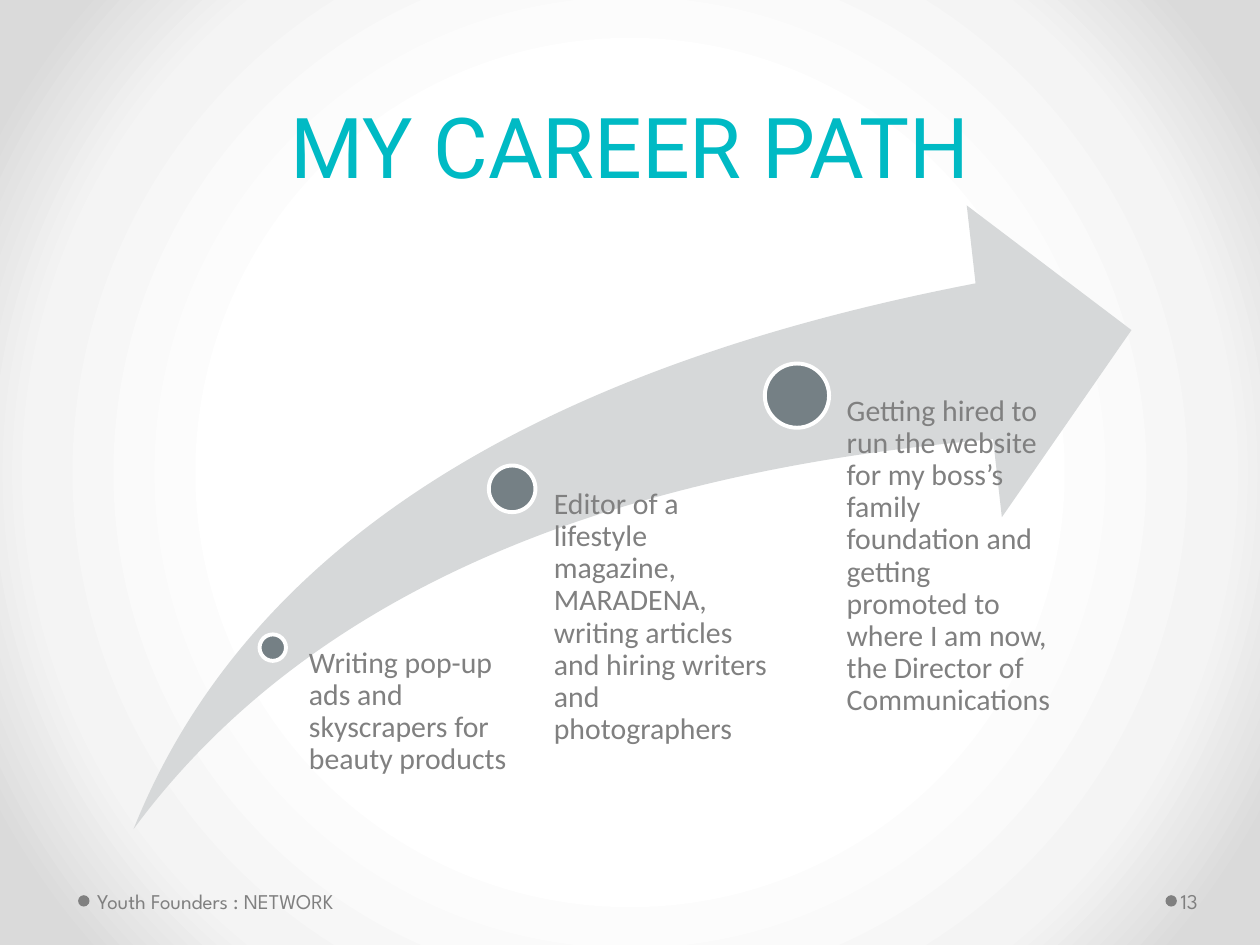
from lxml.etree import SubElement
from pptx import Presentation
from pptx.dml.color import RGBColor
from pptx.enum.shapes import MSO_SHAPE as Preset
from pptx.enum.text import MSO_ANCHOR as Anchor, PP_ALIGN as Align
from pptx.oxml.ns import qn
from pptx.util import Inches, Pt

COLUMNS, ROWS = 100, 75
CELL = Inches(0.1)
COLORS = {
    "title": "00BAC4", "text": "808080", "arrow": "D6D8D9",
    "marker": "758085", "outline": "FFFFFF",
}
BACKGROUND_STOPS = [(50, "FFFFFF"), (76, "F4F4F4"), (92, "DADADA")]
CAPTION_BOTTOM = 65.8
MILESTONES = [
    (21.65, 51.4, 2.1, 23.4, 18.5,
     "Writing pop-up\nads and skyscrapers for beauty products"),
    (40.65, 38.8, 3.7, 42, 19,
     "Editor of a lifestyle magazine, MARADENA, writing articles "
     "and hiring writers and photographers"),
    (63.25, 31.4, 5.1, 64.5, 19,
     "Getting hired to run the website for my boss’s family foundation and "
     "getting promoted to where I am now, the Director of Communications"),
]
FOOTERS = [
    (6.2, 7.2, 31.1, 0.5, "Youth Founders : NETWORK"),
    (92.5, 93.4, 6.1, 0.3, "13"),
]
FOOTER_TOP, FOOTER_HEIGHT, BULLET_SIZE = 69.5, 4, 0.9


def grid(*cells):
    return [round(cell * CELL) for cell in cells]


def rgb(name):
    return RGBColor.from_string(COLORS[name])


def apply(target, values):
    for name, value in values.items():
        setattr(target, name, value)


def paint_background(slide):
    fill = slide.background.fill
    fill.gradient()
    gradient = slide.element.find(".//" + qn("a:gradFill"))
    for child in list(gradient):
        gradient.remove(child)
    stops = SubElement(gradient, qn("a:gsLst"))
    for percent, color in BACKGROUND_STOPS:
        stop = SubElement(stops, qn("a:gs"), pos=str(percent * 1000))
        SubElement(stop, qn("a:srgbClr"), val=color)
    circle = SubElement(gradient, qn("a:path"), path="circle")
    SubElement(circle, qn("a:fillToRect"), dict.fromkeys("ltrb", "50000"))


def add_figure(slide, preset, area, color, outline=None):
    figure = slide.shapes.add_shape(preset, *grid(*area))
    figure.shadow.inherit = False
    figure.fill.solid()
    figure.fill.fore_color.rgb = rgb(color)
    if outline:
        figure.line.color.rgb = rgb(outline)
        figure.line.width = Pt(2.25)
    else:
        figure.line.fill.background()
    return figure


def write(holder, words, color, frame_format, paragraph_format, font_format):
    frame = holder.text_frame
    paragraph = frame.paragraphs[0]
    paragraph.text = words
    apply(frame, {"word_wrap": True, **frame_format})
    apply(paragraph, paragraph_format)
    for run in paragraph.runs:
        apply(run.font, font_format)
        run.font.color.rgb = rgb(color)


def add_title(slide, words):
    title = slide.shapes.title
    apply(title, dict(zip(("left", "top", "width", "height"), grid(5, 1.5, 90, 14.5))))
    write(title, words, "title", {"vertical_anchor": Anchor.BOTTOM},
          {"alignment": Align.CENTER, "line_spacing": Pt(58)},
          {"name": "Roboto", "size": Pt(48)})


def add_milestone(slide, center_x, center_y, diameter, left, width, words):
    corner = center_x - diameter / 2, center_y - diameter / 2
    add_figure(slide, Preset.OVAL, (*corner, diameter, diameter), "marker", "outline")
    caption = slide.shapes.add_textbox(
        *grid(left, center_y, width, CAPTION_BOTTOM - center_y))
    write(caption, words, "text",
          {"margin_left": grid(diameter * 0.53)[0], "margin_top": 0,
           "margin_right": 0, "margin_bottom": 0},
          {"line_spacing": 0.9}, {"name": "Calibri", "size": Pt(17)})


def add_footer(slide, bullet_left, left, width, inset, words):
    bullet_top = FOOTER_TOP + (FOOTER_HEIGHT - BULLET_SIZE) / 2
    add_figure(slide, Preset.OVAL,
               (bullet_left, bullet_top, BULLET_SIZE, BULLET_SIZE), "text")
    footer = slide.shapes.add_textbox(*grid(left, FOOTER_TOP, width, FOOTER_HEIGHT))
    write(footer, words, "text",
          {"vertical_anchor": Anchor.MIDDLE, "margin_left": grid(inset)[0],
           "margin_right": grid(0.5)[0]},
          {}, {"name": "League Spartan", "size": Pt(12)})


def main():
    deck = Presentation()
    apply(deck, {"slide_width": COLUMNS * CELL, "slide_height": ROWS * CELL})
    slide = deck.slides.add_slide(deck.slide_layouts[5])
    paint_background(slide)
    add_title(slide, "MY CAREER PATH")
    career_arrow = add_figure(
        slide, Preset.SWOOSH_ARROW, (10.6, 16.3, 79.2, 49.5), "arrow")
    for index in range(2):
        career_arrow.adjustments[index] = 0.25
    for milestone in MILESTONES:
        add_milestone(slide, *milestone)
    for footer in FOOTERS:
        add_footer(slide, *footer)
    deck.save("out.pptx")


if __name__ == "__main__":
    main()
